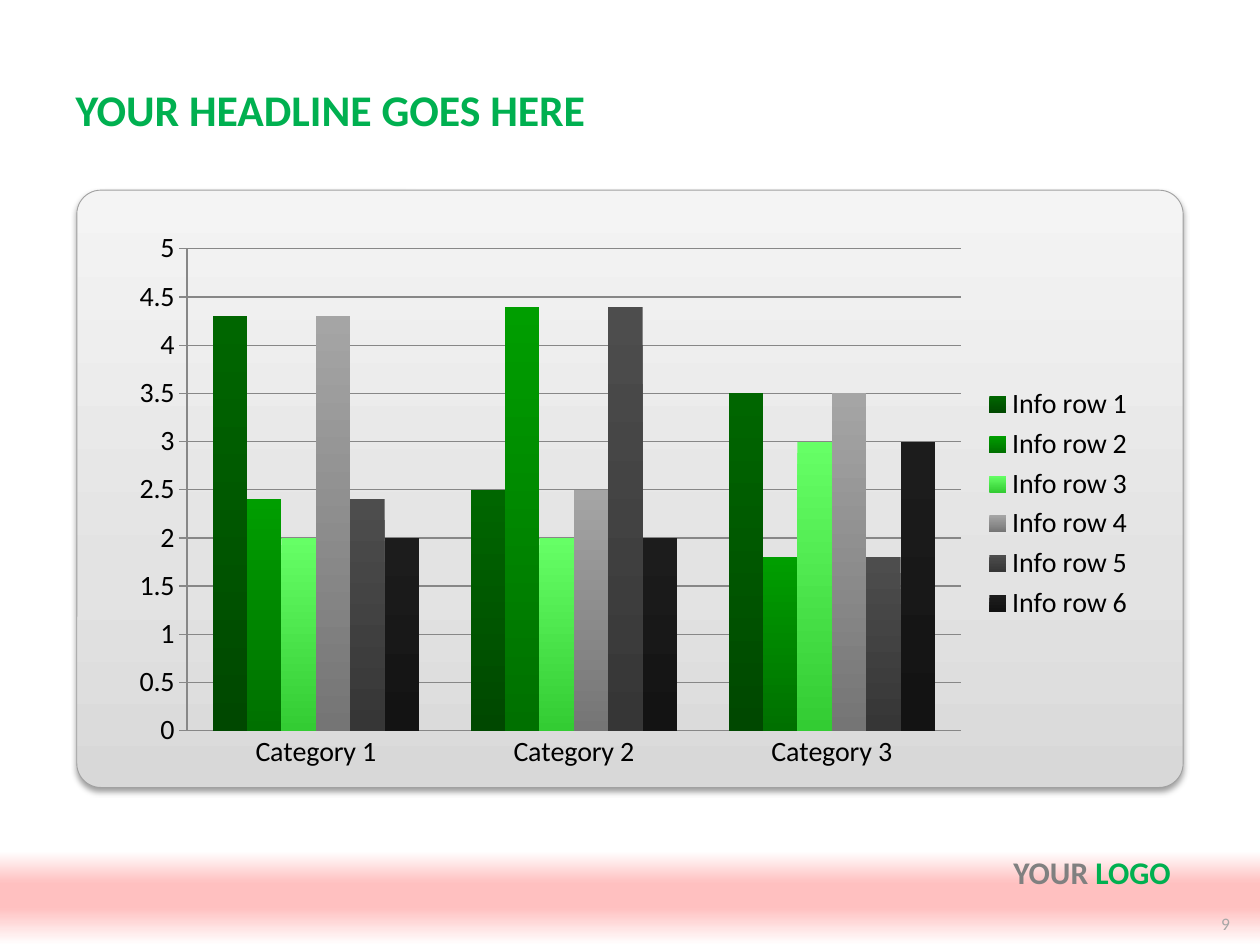
from lxml.etree import SubElement
from pptx import Presentation
from pptx.chart.data import CategoryChartData
from pptx.dml.color import RGBColor
from pptx.enum.chart import XL_CHART_TYPE, XL_LEGEND_POSITION, XL_TICK_MARK
from pptx.enum.shapes import MSO_SHAPE
from pptx.enum.text import MSO_ANCHOR, PP_ALIGN
from pptx.oxml import parse_xml
from pptx.oxml.ns import nsdecls, qn
from pptx.util import Inches, Pt

COLORS = {
    "green": "00B050", "grey": "808080", "number": "A6A6A6", "text": "000000",
    "panel_line": "A1A1A1", "grid": "878787", "white": "FFFFFF", "band": "FFC0C0",
    "panel_low": "D8D8D8", "panel_mid": "E3E3E3", "panel_top": "F4F4F4",
}
FONT = "Calibri"
CATEGORIES = ["Category 1", "Category 2", "Category 3"]
SERIES = [
    ("Info row 1", (4.3, 2.5, 3.5), "006600", "004800"),
    ("Info row 2", (2.4, 4.4, 1.8), "009E00", "007000"),
    ("Info row 3", (2, 2, 3), "66FF66", "33CC33"),
    ("Info row 4", (4.3, 2.5, 3.5), "A5A5A5", "757575"),
    ("Info row 5", (2.4, 4.4, 1.8), "4D4D4D", "363636"),
    ("Info row 6", (2, 2, 3), "1C1C1C", "131313"),
]


def inches(box):
    return [Inches(length) for length in box]


def format_font(font, color, **values):
    for name, value in {"name": FONT, **values}.items():
        setattr(font, name, value)
    font.color.rgb = RGBColor.from_string(COLORS[color])


def fill_gradient(fill, properties, stops, angle):
    fill.gradient()
    fill.gradient_angle = angle
    stop_list = properties.find(qn("a:gradFill")).find(qn("a:gsLst"))
    for old_stop in list(stop_list):
        stop_list.remove(old_stop)
    for percent, color in stops:
        stop = SubElement(stop_list, qn("a:gs"), pos=str(percent * 1000))
        SubElement(stop, qn("a:srgbClr"), val=color)


def add_gradient_shape(slide, kind, box, stops, angle):
    shape = slide.shapes.add_shape(kind, *inches(box))
    shape.shadow.inherit = False
    fill_gradient(shape.fill, shape._element.spPr, stops, angle)
    shape.line.fill.background()
    return shape


def add_panel(slide, box):
    stops = [(0, COLORS["panel_low"]), (35, COLORS["panel_mid"]), (100, COLORS["panel_top"])]
    panel = add_gradient_shape(slide, MSO_SHAPE.ROUNDED_RECTANGLE, box, stops, 90)
    panel.adjustments[0] = 0.04
    panel.line.color.rgb = RGBColor.from_string(COLORS["panel_line"])
    panel.line.width = Pt(0.5)
    properties = panel._element.spPr
    properties.find(qn("a:effectLst")).append(parse_xml(
        f'<a:outerShdw {nsdecls("a")} blurRad="{Pt(3.5)}" dist="{Pt(2)}" dir="5400000" '
        'rotWithShape="0"><a:srgbClr val="000000"><a:alpha val="38000"/></a:srgbClr></a:outerShdw>'))


def add_band(slide, box):
    stops = [(0, COLORS["white"]), (35, COLORS["band"]), (60, COLORS["band"]), (100, COLORS["white"])]
    add_gradient_shape(slide, MSO_SHAPE.RECTANGLE, box, stops, 270)


def place_title(slide, box):
    title = slide.shapes.title
    for name, value in zip(("left", "top", "width", "height"), inches(box)):
        setattr(title, name, value)
    title.text_frame.text = "YOUR HEADLINE GOES HERE"
    title.text_frame.vertical_anchor = MSO_ANCHOR.MIDDLE
    headline = title.text_frame.paragraphs[0]
    headline.alignment = PP_ALIGN.LEFT
    format_font(headline.runs[0].font, "green", size=Pt(25), bold=True)


def add_right_text(slide, box, parts, **values):
    frame = slide.shapes.add_textbox(*inches(box)).text_frame
    frame.word_wrap = True
    paragraph = frame.paragraphs[0]
    paragraph.alignment = PP_ALIGN.RIGHT
    for wording, color in parts:
        run = paragraph.add_run()
        run.text = wording
        format_font(run.font, color, **values)


def set_plot_box(chart, x, y, w, h):
    plot_area = chart._chartSpace.chart.plotArea
    for old_layout in plot_area.findall(qn("c:layout")):
        plot_area.remove(old_layout)
    places = "".join(f'<c:{key} val="{value}"/>' for key, value in
                     {"x": x, "y": y, "w": w, "h": h}.items())
    plot_area.insert(0, parse_xml(
        f'<c:layout {nsdecls("c")}><c:manualLayout><c:layoutTarget val="inner"/>'
        f'<c:xMode val="edge"/><c:yMode val="edge"/>{places}</c:manualLayout></c:layout>'))


def add_info_chart(slide, box):
    info = CategoryChartData()
    info.categories = CATEGORIES
    for name, values, _, _ in SERIES:
        info.add_series(name, values)
    chart = slide.shapes.add_chart(XL_CHART_TYPE.COLUMN_CLUSTERED, *inches(box), info).chart
    format_font(chart.font, "text", size=Pt(18))
    chart.has_title = False
    chart.has_legend = True
    chart.legend.position = XL_LEGEND_POSITION.RIGHT
    chart.legend.include_in_layout = False
    format_font(chart.legend.font, "text", size=Pt(16))

    plot = chart.plots[0]
    plot.gap_width, plot.overlap, plot.vary_by_categories = 150, 0, False
    for series, (_, _, top, bottom) in zip(plot.series, SERIES):
        fill_gradient(series.format.fill, series._element.spPr, [(0, top), (100, bottom)], 270)

    scale = chart.value_axis
    ticks = {chart.category_axis: XL_TICK_MARK.NONE, scale: XL_TICK_MARK.OUTSIDE}
    for axis, tick in ticks.items():
        axis.major_tick_mark = tick
        axis.minor_tick_mark = XL_TICK_MARK.NONE
        format_font(axis.tick_labels.font, "text", size=Pt(16))
    chart.category_axis.format.line.fill.background()
    scale.minimum_scale, scale.maximum_scale, scale.major_unit = 0, 5, 0.5
    scale.tick_labels.number_format = "General"
    scale.tick_labels.number_format_is_linked = False
    for line in (scale.format.line, scale.major_gridlines.format.line):
        line.color.rgb = RGBColor.from_string(COLORS["grid"])
        line.width = Pt(0.75)
    set_plot_box(chart, 0.07, 0.05, 0.75, 0.85)


def main():
    deck = Presentation()
    deck.slide_width, deck.slide_height = Inches(10), Inches(7.5)
    slide = deck.slides.add_slide(deck.slide_layouts[5])
    add_panel(slide, (0.61, 1.51, 8.78, 4.74))
    add_band(slide, (0, 6.75, 10, 0.75))
    place_title(slide, (0.5, 0.59, 9, 0.55))
    add_info_chart(slide, (0.91, 1.75, 8.19, 4.5))
    add_right_text(slide, (9.39, 7.2, 0.47, 0.3), [("9", "number")], size=Pt(10))
    add_right_text(slide, (0.5, 6.72, 8.89, 0.55),
                   [("YOUR ", "grey"), ("LOGO", "green")], size=Pt(18), bold=True)
    deck.save("out.pptx")


if __name__ == "__main__":
    main()
